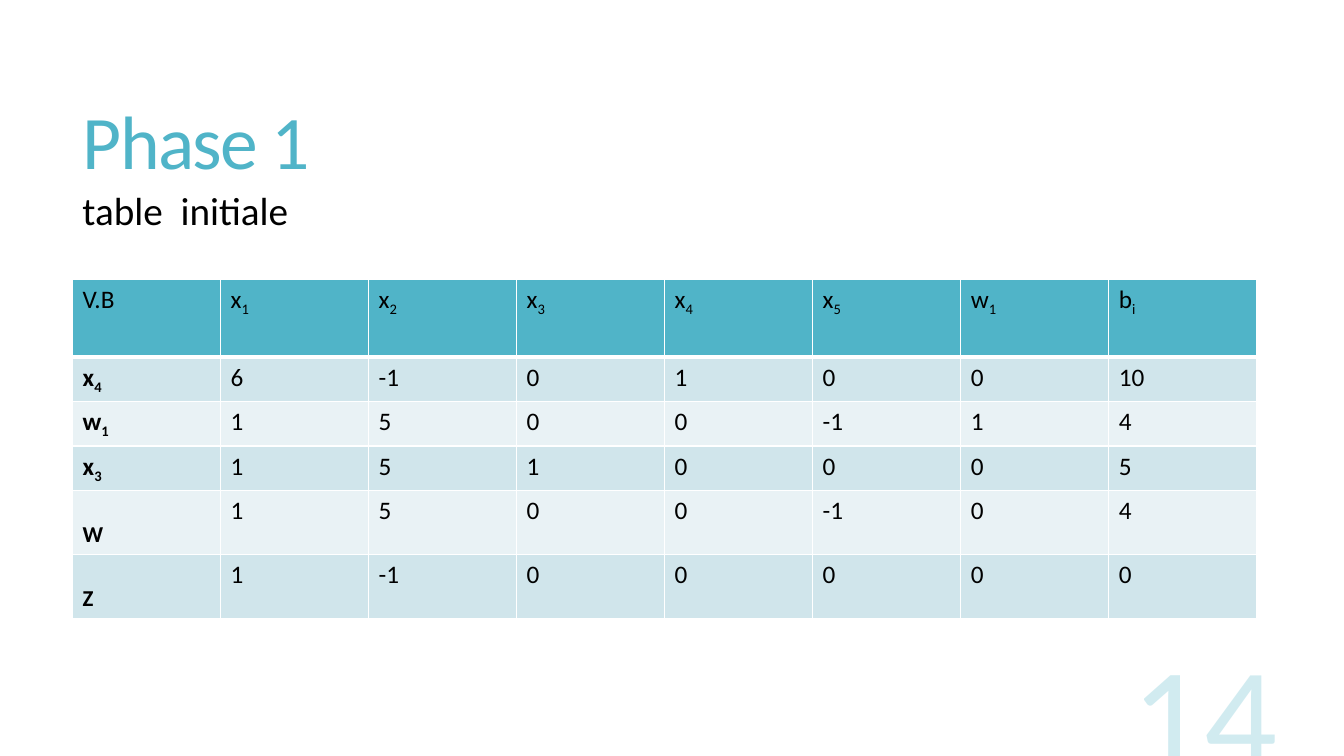
from lxml import etree
from pptx import Presentation
from pptx.dml.color import RGBColor
from pptx.enum import text
from pptx.oxml import ns
from pptx.util import Cm, Pt

TEAL = RGBColor(0x50, 0xB4, 0xC8)
BAND_DARK = RGBColor(0xD0, 0xE5, 0xEB)
BAND_LIGHT = RGBColor(0xE9, 0xF2, 0xF5)
BLACK = RGBColor(0, 0, 0)
WHITE = RGBColor(0xFF, 0xFF, 0xFF)

# A "_" separates a symbol from its subscript
HEADINGS = ["V.B", "x_1", "x_2", "x_3", "x_4", "x_5", "w_1", "b_i"]
TABLEAU = [
    ["x_4", 6, -1, 0, 1, 0, 0, 10],
    ["w_1", 1, 5, 0, 0, -1, 1, 4],
    ["x_3", 1, 5, 1, 0, 0, 0, 5],
    ["_W", 1, 5, 0, 0, -1, 0, 4],
    ["_Z", 1, -1, 0, 0, 0, 0, 0],
]
ROW_HEIGHTS = [1.96, 1.12, 1.12, 1.12, 1.61, 1.61]
COLUMN_WIDTH = 3.73


def add_run(paragraph, words, size=18, color=BLACK, bold=False,
            subscript=False, spacing=None, alpha=None):
    run = paragraph.add_run()
    run.text = words
    run.font.name = "Calibri"
    run.font.size = Pt(size)
    run.font.bold = bold
    run.font.color.rgb = color
    properties = run.font._element
    if subscript:
        properties.set("baseline", "-25000")
    if spacing is not None:
        properties.set("spc", str(round(spacing * 100)))
    if alpha is not None:
        tint = properties.find(".//" + ns.qn("a:srgbClr"))
        etree.SubElement(tint, ns.qn("a:alpha")).set("val", str(alpha * 1000))


def set_frame(shape, left, top, width, height, anchor):
    shape.left, shape.top = Cm(left), Cm(top)
    shape.width, shape.height = Cm(width), Cm(height)
    frame = shape.text_frame
    frame.word_wrap = True
    frame.auto_size = text.MSO_AUTO_SIZE.NONE
    frame.vertical_anchor = anchor
    return frame.paragraphs[0]


def add_label(slide, words, left, top, width, height, anchor,
              align=text.PP_ALIGN.LEFT, **style):
    box = slide.shapes.add_textbox(0, 0, 0, 0)
    paragraph = set_frame(box, left, top, width, height, anchor)
    paragraph.alignment = align
    add_run(paragraph, words, **style)


def set_borders(cell, bottom):
    properties = cell._tc.get_or_add_tcPr()
    for side, width in (("L", 1), ("R", 1), ("T", 1), ("B", bottom)):
        line = etree.SubElement(properties, ns.qn(f"a:ln{side}"), w=str(Pt(width)))
        fill = etree.SubElement(line, ns.qn("a:solidFill"))
        etree.SubElement(fill, ns.qn("a:srgbClr"), val=str(WHITE))


def fill_cell(cell, value, fill, bold=False, bottom=1):
    set_borders(cell, bottom)
    cell.fill.solid()
    cell.fill.fore_color.rgb = fill
    symbol, _, index = str(value).partition("_")
    paragraph = cell.text_frame.paragraphs[0]
    if symbol:
        add_run(paragraph, symbol, bold=bold)
    if index:
        # The objective rows carry a large lowered letter alone
        add_run(paragraph, index, size=18 if symbol else 28,
                bold=bold, subscript=True)


def add_tableau(slide, left, top):
    rows = [HEADINGS] + TABLEAU
    tableau = slide.shapes.add_table(
        len(rows), len(HEADINGS), Cm(left), Cm(top),
        Cm(COLUMN_WIDTH * len(HEADINGS)), Cm(sum(ROW_HEIGHTS))).table
    for column in tableau.columns:
        column.width = Cm(COLUMN_WIDTH)
    for r, values in enumerate(rows):
        tableau.rows[r].height = Cm(ROW_HEIGHTS[r])
        heading = r == 0
        fill = TEAL if heading else BAND_DARK if r % 2 else BAND_LIGHT
        for c, value in enumerate(values):
            fill_cell(tableau.cell(r, c), value, fill,
                      bold=c == 0 and not heading, bottom=3 if heading else 1)


def main():
    deck = Presentation()
    deck.slide_width, deck.slide_height = Cm(33.87), Cm(19.05)
    slide = deck.slides.add_slide(deck.slide_layouts[5])

    # Title
    heading = set_frame(slide.shapes.title, 1.83, 1.4, 29.92, 4.6,
                        text.MSO_ANCHOR.MIDDLE)
    heading.alignment = text.PP_ALIGN.LEFT
    heading.line_spacing = 0.85
    add_run(heading, "Phase 1", size=54, color=TEAL, spacing=-1.2)

    # Simplex tableau
    add_tableau(slide, 1.83, 7.04)

    # Page number and subtitle
    add_label(slide, "14", 24.33, 16.33, 8.13, 3.89, text.MSO_ANCHOR.BOTTOM,
              align=text.PP_ALIGN.RIGHT, size=103, color=TEAL, alpha=25)
    add_label(slide, "table  initiale", 1.83, 4.7, 13.36, 1.19,
              text.MSO_ANCHOR.MIDDLE, size=28)

    deck.save("out.pptx")


if __name__ == "__main__":
    main()
